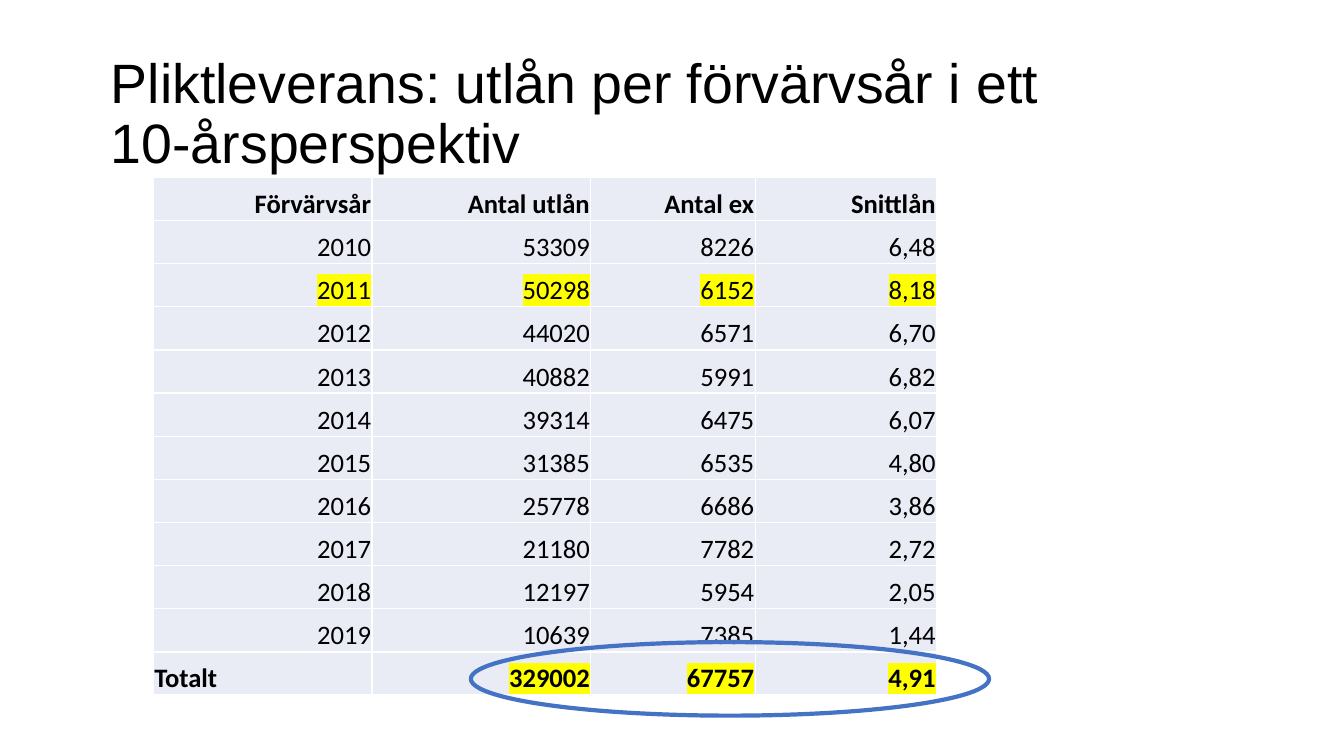
from lxml import etree
from pptx import Presentation, util as u
from pptx.dml.color import RGBColor
from pptx.enum import shapes, text
from pptx.oxml import ns

theme = {
    "ink": RGBColor.from_string("000000"),
    "cell": RGBColor.from_string("E9EBF5"),
    "ring": RGBColor.from_string("4472C4"),
    "mark": "FFFF00",
    "grid": "FFFFFF",
    "title_font": "Arial",
    "table_font": "Calibri",
    "title_size": u.Pt(39.6),
    "table_size": u.Pt(19),
}

loans = [
    ("Förvärvsår", "Antal utlån", "Antal ex", "Snittlån"),
    ("2010", "53309", "8226", "6,48"),
    ("2011", "50298", "6152", "8,18"),
    ("2012", "44020", "6571", "6,70"),
    ("2013", "40882", "5991", "6,82"),
    ("2014", "39314", "6475", "6,07"),
    ("2015", "31385", "6535", "4,80"),
    ("2016", "25778", "6686", "3,86"),
    ("2017", "21180", "7782", "2,72"),
    ("2018", "12197", "5954", "2,05"),
    ("2019", "10639", "7385", "1,44"),
    ("Totalt", "", "", ""),
]
totals = ("Totalt", "329002", "67757", "4,91")
loans[-1] = totals
marked_years = ("2011", "Totalt")
column_widths = (2.17, 2.17, 1.63, 1.8)


def add_fill(parent, tag, colour, **attributes):
    holder = etree.SubElement(parent, ns.qn(tag), attributes)
    fill = etree.SubElement(holder, ns.qn("a:solidFill"))
    etree.SubElement(fill, ns.qn("a:srgbClr"), val=colour)


def format_font(font, **values):
    for name, value in values.items():
        setattr(font, name, value)
    font.color.rgb = theme["ink"]


deck = Presentation()
deck.slide_width, deck.slide_height = u.Inches(13.33), u.Inches(7.5)
slide = deck.slides.add_slide(deck.slide_layouts[5])

heading = slide.shapes.title
heading_box = {"left": 1, "top": 0.5, "width": 11.42, "height": 0.83}
for side, inches in heading_box.items():
    setattr(heading, side, u.Inches(inches))
heading.text_frame.text = "Pliktleverans: utlån per förvärvsår i ett \v10-årsperspektiv"
heading.text_frame.auto_size = text.MSO_AUTO_SIZE.NONE
heading.text_frame.vertical_anchor = text.MSO_ANCHOR.TOP
heading_lines = heading.text_frame.paragraphs[0]
heading_lines.alignment = text.PP_ALIGN.LEFT
heading_lines.line_spacing = 0.9
for line in heading_lines.runs:
    format_font(line.font, name=theme["title_font"], size=theme["title_size"])

loan_table = slide.shapes.add_table(
    len(loans), len(column_widths),
    u.Inches(1.52), u.Inches(1.76), u.Inches(sum(column_widths)), u.Inches(5.14),
).table
loan_table.first_row = loan_table.horz_banding = False
for column, width in zip(loan_table.columns, column_widths):
    column.width = u.Inches(width)

cell_format = {
    "margin_left": u.Inches(0.01),
    "margin_right": u.Inches(0.01),
    "margin_top": u.Inches(0.01),
    "margin_bottom": 0,
    "vertical_anchor": text.MSO_ANCHOR.BOTTOM,
}
for row, values in enumerate(loans):
    for col, value in enumerate(values):
        cell = loan_table.cell(row, col)
        for name, setting in cell_format.items():
            setattr(cell, name, setting)
        for edge in ("a:lnL", "a:lnR", "a:lnT", "a:lnB"):
            add_fill(cell._tc.get_or_add_tcPr(), edge, theme["grid"], w=str(u.Pt(1)))
        cell.fill.solid()
        cell.fill.fore_color.rgb = theme["cell"]

        entry = cell.text_frame.paragraphs[0]
        is_label = value == "Totalt"
        entry.alignment = text.PP_ALIGN.LEFT if is_label else text.PP_ALIGN.RIGHT
        figure = entry.add_run()
        figure.text = value
        format_font(figure.font, size=theme["table_size"], bold=row in (0, len(loans) - 1))
        if values[0] in marked_years and not is_label:
            highlight = etree.SubElement(figure.font._element, ns.qn("a:highlight"))
            etree.SubElement(highlight, ns.qn("a:srgbClr"), val=theme["mark"])
        figure.font.name = theme["table_font"]

totals_ring = slide.shapes.add_shape(
    shapes.MSO_SHAPE.OVAL, u.Inches(4.67), u.Inches(6.37), u.Inches(5.14), u.Inches(0.73)
)
totals_ring.shadow.inherit = False
totals_ring.fill.background()
totals_ring.line.color.rgb = theme["ring"]
totals_ring.line.width = u.Pt(3)

deck.save("out.pptx")
